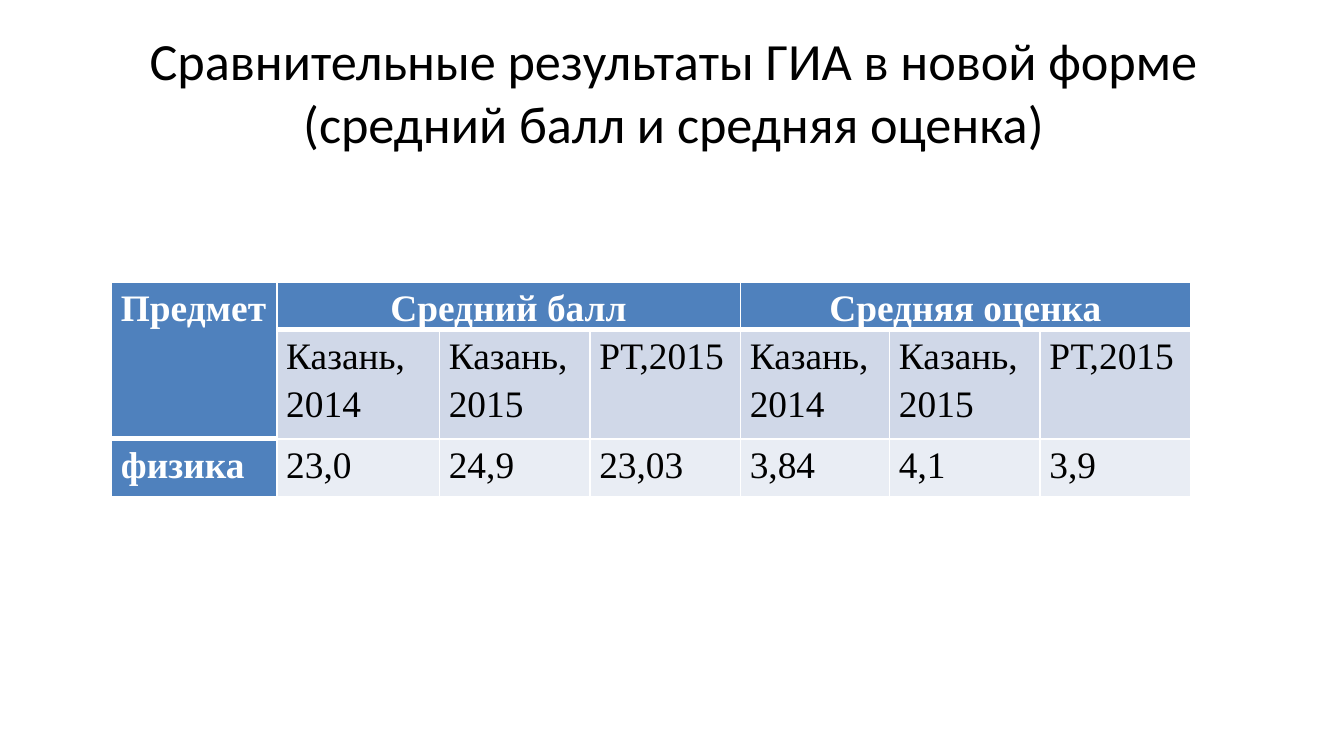
from lxml.etree import SubElement
from pptx import Presentation
from pptx.dml.color import RGBColor
from pptx.enum.text import MSO_ANCHOR as Anchor, MSO_AUTO_SIZE as AutoSize, PP_ALIGN as Align
from pptx.oxml.ns import qn
from pptx.util import Inches, Pt

HEADING = "Сравнительные результаты ГИА в новой форме (средний балл и средняя оценка)"
SUBJECT = "Предмет"
MEASURES = ["Средний балл", "Средняя оценка"]
GROUPS = ["Казань,\n2014", "Казань,\n2015", "РТ,2015"]
RESULTS = ["физика", "23,0", "24,9", "23,03", "3,84", "4,1", "3,9"]

SLIDE_WIDTH = Inches(10)
SLIDE_HEIGHT = SLIDE_WIDTH * 9 // 16
COLUMN_WIDTHS = [1.23, 1.21, 1.12, 1.12, 1.11, 1.12, 1.12]
ROW_HEIGHTS = [0.35, 0.81, 0.43]

BLACK = RGBColor(0x00, 0x00, 0x00)
WHITE = RGBColor(0xFF, 0xFF, 0xFF)
BLUE = RGBColor(0x4F, 0x81, 0xBD)
PALE_BLUE = RGBColor(0xD0, 0xD8, 0xE8)
PALEST_BLUE = RGBColor(0xE9, 0xED, 0xF4)
ROW_FILLS = [BLUE, PALE_BLUE, PALEST_BLUE]

CELL_FORMAT = {
    "margin_left": Inches(0.07),
    "margin_right": Inches(0.07),
    "margin_top": 0,
    "margin_bottom": 0,
    "vertical_anchor": Anchor.TOP,
}


def apply(target, values):
    for key, value in values.items():
        setattr(target, key, value)


def add_borders(cell, widths):
    properties = cell._tc.get_or_add_tcPr()
    for position, (side, width) in enumerate(widths.items()):
        line = SubElement(properties, qn(f"a:ln{side}"), w=str(Pt(width)))
        SubElement(SubElement(line, qn("a:solidFill")), qn("a:srgbClr"), val=str(WHITE))
        properties.insert(position, line)


def format_cell(cell, text, row, column):
    heading = row == 0 or column == 0
    apply(cell, CELL_FORMAT)
    cell.fill.solid()
    cell.fill.fore_color.rgb = BLUE if heading else ROW_FILLS[row]
    header_end = row == 0 or (row == 1 and column == 0)
    add_borders(cell, {"L": 1, "R": 1, "T": 1, "B": 3 if header_end else 1})
    if not text:
        return
    cell.text = text
    for paragraph in cell.text_frame.paragraphs:
        paragraph.line_spacing = 1.15
        paragraph.alignment = Align.CENTER if text in MEASURES else Align.LEFT
        for run in paragraph.runs:
            apply(run.font, {"name": "Times New Roman", "size": Pt(20), "bold": heading})
            run.font.color.rgb = WHITE if heading else BLACK


deck = Presentation()
apply(deck, {"slide_width": SLIDE_WIDTH, "slide_height": SLIDE_HEIGHT})
slide = deck.slides.add_slide(deck.slide_layouts[5])

title = slide.shapes.title
apply(title, {"left": Inches(0.51), "top": Inches(0.21),
              "width": Inches(9), "height": Inches(0.94)})
title.text = HEADING
apply(title.text_frame, {"word_wrap": True, "auto_size": AutoSize.NONE,
                         "vertical_anchor": Anchor.MIDDLE})
heading_line = title.text_frame.paragraphs[0]
heading_line.alignment = Align.CENTER
heading_font = heading_line.runs[0].font
apply(heading_font, {"name": "Calibri", "size": Pt(28)})
heading_font.color.rgb = BLACK

span = len(GROUPS)
measure_row = [SUBJECT]
for measure in MEASURES:
    measure_row += [measure] + [""] * (span - 1)
rows = [measure_row, [""] + GROUPS * len(MEASURES), RESULTS]

results = slide.shapes.add_table(
    len(rows), len(COLUMN_WIDTHS), Inches(0.83), Inches(2.1),
    Inches(sum(COLUMN_WIDTHS)), Inches(sum(ROW_HEIGHTS))).table
for column, width in zip(results.columns, COLUMN_WIDTHS):
    column.width = Inches(width)
for row, height in zip(results.rows, ROW_HEIGHTS):
    row.height = Inches(height)

results.cell(0, 0).merge(results.cell(1, 0))
for first in range(1, len(COLUMN_WIDTHS), span):
    results.cell(0, first).merge(results.cell(0, first + span - 1))
for r, texts in enumerate(rows):
    for c, text in enumerate(texts):
        format_cell(results.cell(r, c), text, r, c)

deck.save("out.pptx")
